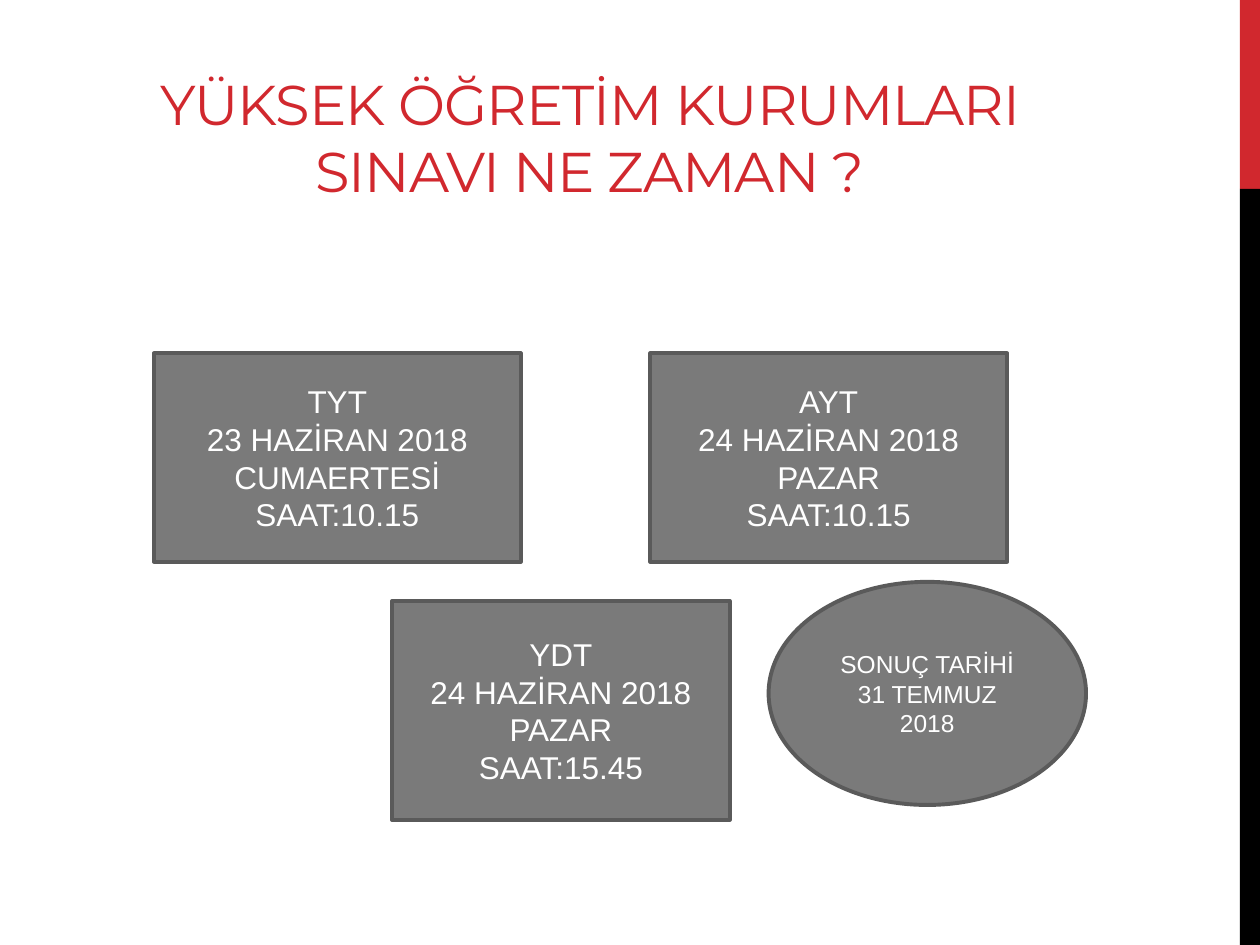
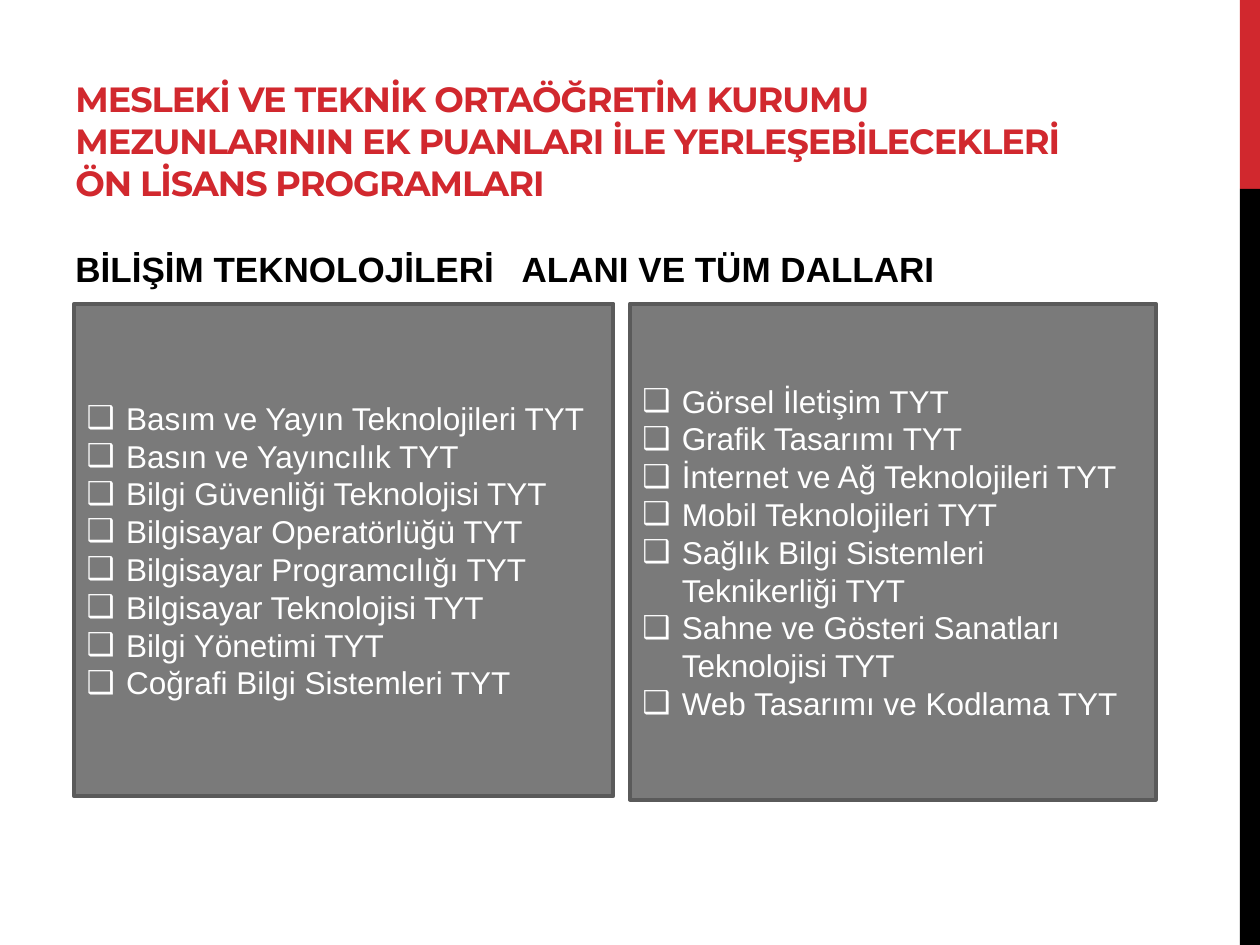
from lxml.etree import SubElement
from pptx import Presentation
from pptx.dml.color import RGBColor
from pptx.enum.shapes import MSO_SHAPE
from pptx.enum.text import MSO_ANCHOR, PP_ALIGN
from pptx.oxml.ns import qn
from pptx.util import Pt

RED, BLACK, WHITE = "D1282E", "000000", "FFFFFF"
GRAY, EDGE = "7A7A7A", "5A5A5A"
LEFT, MID = PP_ALIGN.LEFT, PP_ALIGN.CENTER
INDENT = 22.5
BODY = {"name": "Arial", "size": Pt(18)}
SMALL = {"name": "Arial", "size": Pt(14)}
HEAD = {"name": "Arial", "size": Pt(20), "bold": True}

deck = Presentation()
deck.slide_width, deck.slide_height = Pt(720), Pt(540)


def draw(slide, kind, box, fill, edge=None):
    """Add a preset shape; box is left, top, width, height in points."""
    shape = slide.shapes.add_shape(kind, *map(Pt, box))
    shape.shadow.inherit = False
    shape.fill.solid()
    shape.fill.fore_color.rgb = RGBColor.from_string(fill)
    if edge:
        shape.line.color.rgb = RGBColor.from_string(edge)
        shape.line.width = Pt(2.25)
    else:
        shape.line.fill.background()
    return shape


def write(shape, lines, look, color, align, anchor=MSO_ANCHOR.MIDDLE, bullet=None):
    """Fill a shape with one paragraph per line and return the paragraphs."""
    frame = shape.text_frame
    frame.word_wrap = True
    frame.vertical_anchor = anchor
    for i, line in enumerate(lines):
        para = frame.add_paragraph() if i else frame.paragraphs[0]
        para.alignment = align
        if bullet:
            props = para._p.get_or_add_pPr()
            props.set("marL", str(Pt(INDENT)))
            props.set("indent", str(-Pt(INDENT)))
            SubElement(props, qn("a:buFont"), typeface="Arial")
            SubElement(props, qn("a:buChar"), char=bullet)
        run = para.add_run()
        run.text = line
        for key, value in look.items():
            setattr(run.font, key, value)
        run.font.color.rgb = RGBColor.from_string(color)
    return frame.paragraphs


# Both slides: side bands and title
titles = [
    ("YÜKSEK ÖĞRETİM KURUMLARI SINAVI NE ZAMAN ?", 32, False, MID),
    ("MESLEKİ VE TEKNİK ORTAÖĞRETİM KURUMU MEZUNLARININ EK PUANLARI İLE "
     "YERLEŞEBİLECEKLERİ ÖN LİSANS PROGRAMLARI", 20, True, LEFT),
]
slides = []
for text, size, bold, align in titles:
    slide = deck.slides.add_slide(deck.slide_layouts[6])
    slides.append(slide)
    for top, height, fill in [(0, 108, RED), (108, 432, BLACK)]:
        draw(slide, MSO_SHAPE.RECTANGLE, (708.5, top, 11.5, height), fill)
    title = slide.shapes.add_textbox(Pt(36), Pt(12), Pt(602), Pt(108))
    look = {"name": "Montserrat", "size": Pt(size), "bold": bold}
    para = write(title, [text], look, RED, align, MSO_ANCHOR.BOTTOM)[0]
    para.runs[0]._r.get_or_add_rPr().set("spc", "-60")

dates, programs = slides

# Slide 1: exam dates and result date
exams = [
    ((88, 202, 209.5, 119), "TYT", "23 HAZİRAN 2018", "CUMAERTESİ", "SAAT:10.15"),
    ((371.5, 202, 204, 119), "AYT", "24 HAZİRAN 2018", "PAZAR", "SAAT:10.15"),
    ((224, 343.5, 193, 125), "YDT", "24 HAZİRAN 2018", "PAZAR", "SAAT:15.45"),
]
for box, *lines in exams:
    card = draw(dates, MSO_SHAPE.FLOWCHART_PROCESS, box, GRAY, EDGE)
    write(card, lines, BODY, WHITE, MID)

result = draw(dates, MSO_SHAPE.OVAL, (439.2, 332.5, 181.4, 127.5), GRAY, EDGE)
write(result, ["SONUÇ TARİHİ", "31 TEMMUZ 2018"], SMALL, WHITE, MID)

# Slide 2: field heading and two program lists
field = programs.shapes.add_textbox(Pt(36), Pt(138), Pt(600), Pt(344))
para = write(field, ["BİLİŞİM TEKNOLOJİLERİ\tALANI VE TÜM DALLARI"],
             HEAD, BLACK, LEFT, MSO_ANCHOR.TOP)[0]
para.space_after = Pt(6)
tabs = SubElement(para._p.get_or_add_pPr(), qn("a:tabLst"))
SubElement(tabs, qn("a:tab"), pos=str(Pt(255)), algn="l")

panels = [
    ((42.5, 173.5, 308, 281.5), [
        "Basım ve Yayın Teknolojileri TYT",
        "Basın ve Yayıncılık TYT",
        "Bilgi Güvenliği Teknolojisi TYT",
        "Bilgisayar Operatörlüğü TYT",
        "Bilgisayar Programcılığı TYT",
        "Bilgisayar Teknolojisi TYT",
        "Bilgi Yönetimi TYT",
        "Coğrafi Bilgi Sistemleri TYT",
    ]),
    ((360, 173.5, 300.5, 283.5), [
        "Görsel İletişim TYT",
        "Grafik Tasarımı TYT",
        "İnternet ve Ağ Teknolojileri TYT",
        "Mobil Teknolojileri TYT",
        "Sağlık Bilgi Sistemleri Teknikerliği TYT",
        "Sahne ve Gösteri Sanatları Teknolojisi TYT",
        "Web Tasarımı ve Kodlama TYT",
    ]),
]
for box, names in panels:
    panel = draw(programs, MSO_SHAPE.RECTANGLE, box, GRAY, EDGE)
    write(panel, names, BODY, WHITE, LEFT, bullet="❑")

deck.save("out.pptx")
